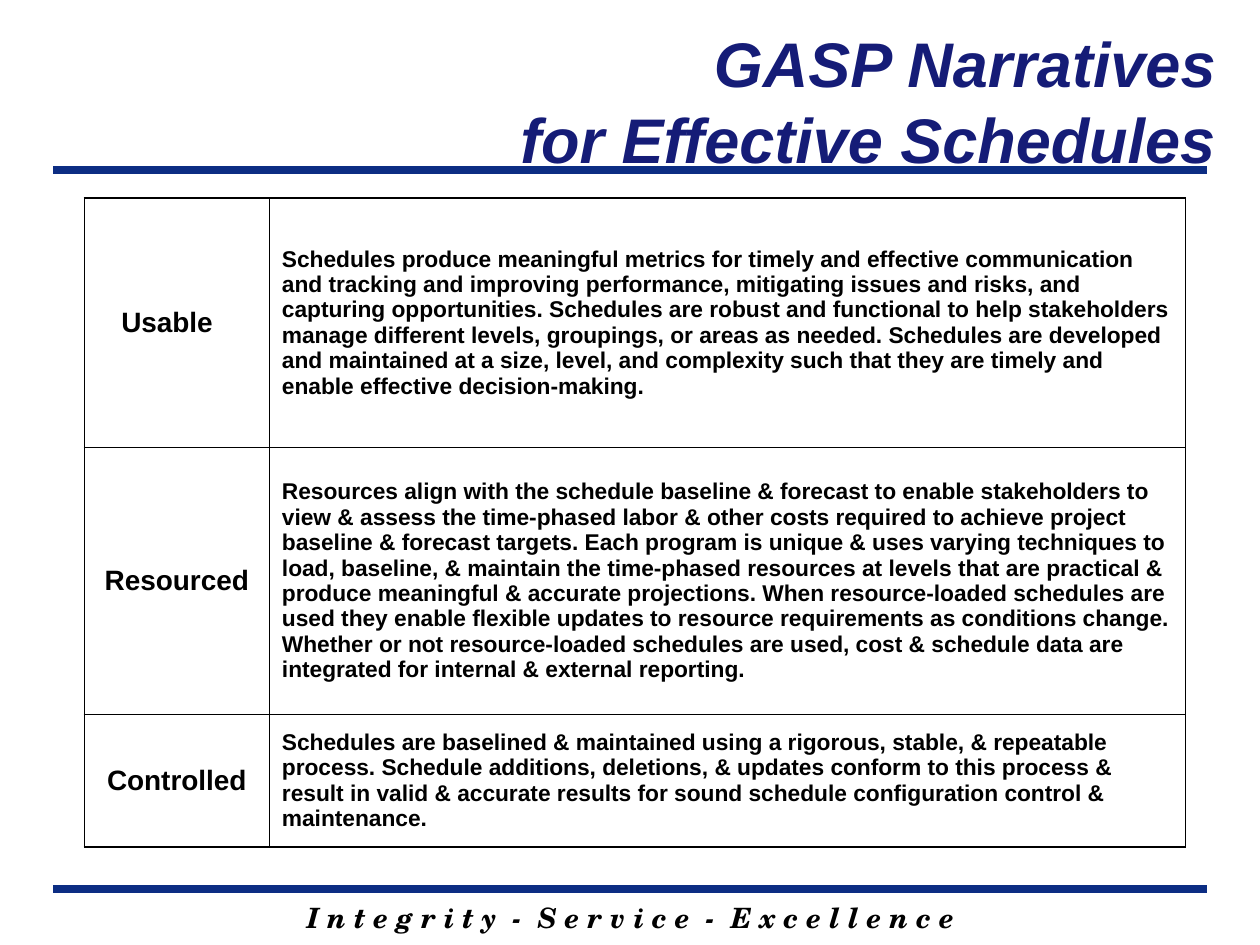
from lxml.etree import SubElement
from pptx import Presentation
from pptx.dml.color import RGBColor
from pptx.enum.shapes import MSO_CONNECTOR
from pptx.enum.text import MSO_ANCHOR, PP_ALIGN
from pptx.oxml.ns import qn
from pptx.util import Cm, Pt

NAVY = RGBColor(0x15, 0x1C, 0x77)
RULE_BLUE = RGBColor(0x0C, 0x2D, 0x83)
BLACK = RGBColor(0, 0, 0)

# Content
TITLE = ["GASP Narratives", "for Effective Schedules"]
MOTTO = "I n t e g r i t y  -  S e r v i c e  -  E x c e l l e n c e"
ROWS = [  # label, narrative, row height in cm
    ("Usable\t",
     "Schedules produce meaningful metrics for timely and effective communication and "
     "tracking and improving performance, mitigating issues and risks, and capturing "
     "opportunities. Schedules are robust and functional to help stakeholders manage "
     "different levels, groupings, or areas as needed. Schedules are developed and "
     "maintained at a size, level, and complexity such that they are timely and enable "
     "effective decision-making.", 5.03),
    ("Resourced",
     "Resources align with the schedule baseline & forecast to enable stakeholders to view "
     "& assess the time-phased labor & other costs required to achieve project baseline & "
     "forecast targets. Each program is unique & uses varying techniques to load, baseline, "
     "& maintain the time-phased resources at levels that are practical & produce meaningful "
     "& accurate projections. When resource-loaded schedules are used they enable flexible "
     "updates to resource requirements as conditions change. Whether or not resource-loaded "
     "schedules are used, cost & schedule data are integrated for internal & external "
     "reporting.", 5.38),
    ("Controlled",
     "Schedules are baselined & maintained using a rigorous, stable, & repeatable process. "
     "Schedule additions, deletions, & updates conform to this process & result in valid & "
     "accurate results for sound schedule configuration control & maintenance.", 2.67),
]
COLUMNS = [3.73, 18.47]
RULES = [(3.43, 4.5), (3.38, 1.5), (17.93, 4.5)]  # y in cm, width in points

# Text formats
TITLE_FONT = dict(name="Arial", size=Pt(36), bold=True, italic=True)
MOTTO_FONT = dict(name="TeX Gyre Schola", size=Pt(16), bold=True, italic=True)
LABEL_FONT = dict(name="Arial", size=Pt(16), bold=True)
BODY_FONT = dict(name="Arial", size=Pt(13), bold=True)


def write(p, text, font, color, align):
    p.alignment = align
    r = p.add_run()
    r.text = text
    for name, value in font.items():
        setattr(r.font, name, value)
    r.font.color.rgb = color


def add_text(slide, box, lines, font, color, align, anchor):
    tf = slide.shapes.add_textbox(*map(Cm, box)).text_frame
    tf.word_wrap = True
    tf.vertical_anchor = anchor
    for i, line in enumerate(lines):
        p = tf.add_paragraph() if i else tf.paragraphs[0]
        write(p, line, font, color, align)


def add_rule(slide, y, width):
    s = slide.shapes.add_connector(MSO_CONNECTOR.STRAIGHT, Cm(1.07), Cm(y), Cm(24.33), Cm(y))
    s.line.color.rgb = RULE_BLUE
    s.line.width = Pt(width)
    SubElement(s._element.spPr, qn("a:effectLst"))


def add_borders(cell):
    tcPr = cell._tc.get_or_add_tcPr()
    for side in ("L", "R", "T", "B"):
        ln = SubElement(tcPr, qn(f"a:ln{side}"), w=str(Pt(1)))
        SubElement(SubElement(ln, qn("a:solidFill")), qn("a:srgbClr"), val=str(BLACK))


def fill_cell(cell, text, font, align, hanging):
    add_borders(cell)
    cell.fill.background()
    cell.vertical_anchor = MSO_ANCHOR.MIDDLE
    p = cell.text_frame.paragraphs[0]
    pPr = p._p.get_or_add_pPr()
    pPr.set("marL", str(Cm(hanging)))
    pPr.set("indent", str(-Cm(hanging)))
    write(p, text, font, BLACK, align)


def add_narratives(slide):
    heights = [row[2] for row in ROWS]
    table = slide.shapes.add_table(len(ROWS), len(COLUMNS), Cm(1.7), Cm(3.99),
                                   Cm(sum(COLUMNS)), Cm(sum(heights))).table
    table.first_row = table.horz_banding = False
    for column, width in zip(table.columns, COLUMNS):
        column.width = Cm(width)
    for i, (label, narrative, height) in enumerate(ROWS):
        table.rows[i].height = Cm(height)
        fill_cell(table.cell(i, 0), label, LABEL_FONT, PP_ALIGN.CENTER, 0.97)
        fill_cell(table.cell(i, 1), narrative, BODY_FONT, PP_ALIGN.LEFT, 0)


def main():
    prs = Presentation()
    prs.slide_width, prs.slide_height = Cm(25.4), Cm(19.05)
    slide = prs.slides.add_slide(prs.slide_layouts[6])
    # Rules and motto
    for y, width in RULES:
        add_rule(slide, y, width)
    add_text(slide, (3.61, 18.03, 18.21, 0.94), [MOTTO], MOTTO_FONT, BLACK,
             PP_ALIGN.CENTER, MSO_ANCHOR.TOP)
    # Table and title
    add_narratives(slide)
    add_text(slide, (8.25, 0.43, 16.51, 3.18), TITLE, TITLE_FONT, NAVY,
             PP_ALIGN.RIGHT, MSO_ANCHOR.MIDDLE)
    prs.save("out.pptx")


if __name__ == "__main__":
    main()
